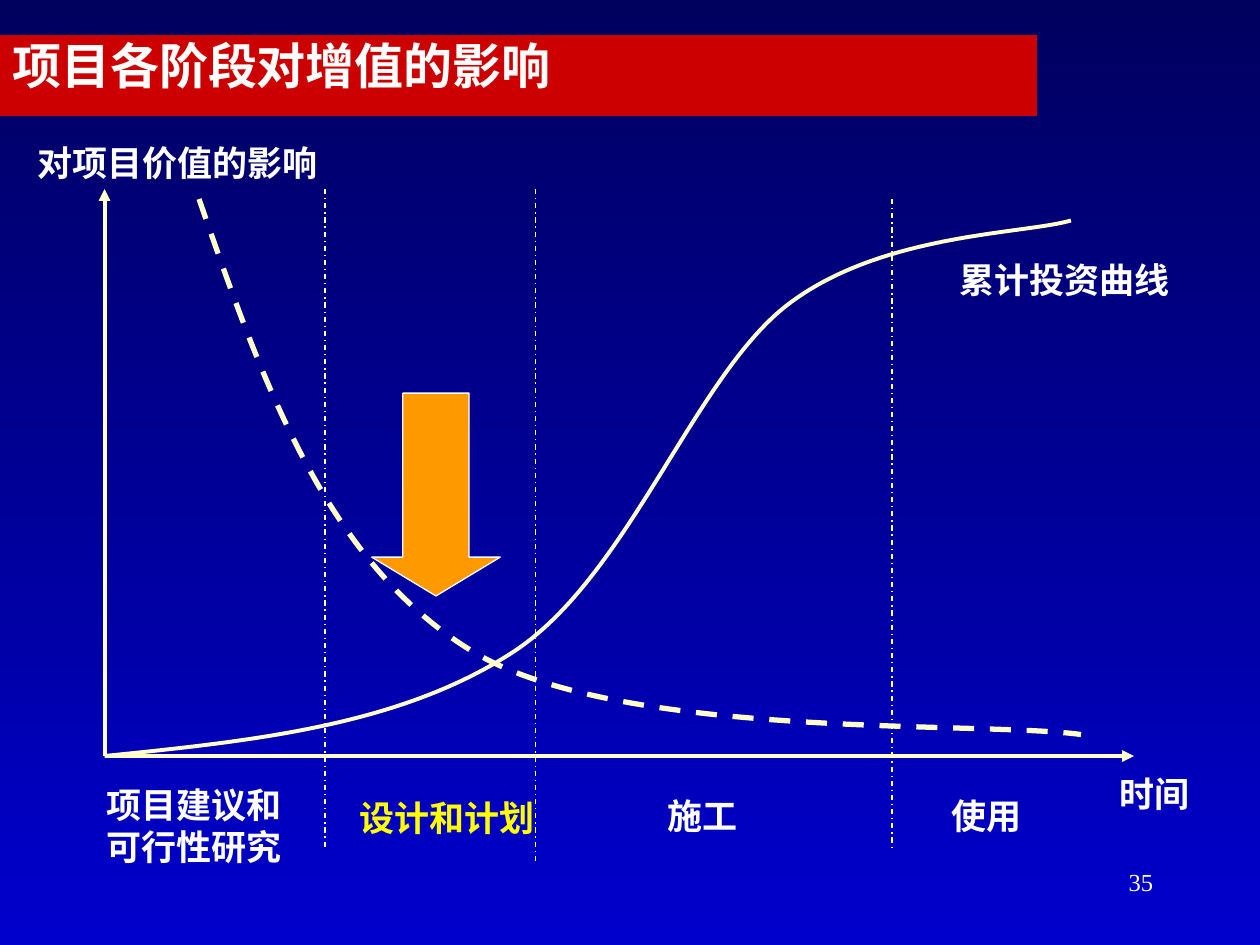
from dataclasses import dataclass

from lxml import etree
from pptx import Presentation
from pptx.dml.color import RGBColor
from pptx.enum.dml import MSO_LINE_DASH_STYLE as Dash
from pptx.enum.shapes import MSO_CONNECTOR as Connector, MSO_SHAPE as Shape
from pptx.enum.text import MSO_ANCHOR as Anchor, PP_ALIGN as Align
from pptx.oxml.ns import qn
from pptx.util import Inches, Pt


@dataclass(frozen=True)
class Theme:
    top: str = "00005E"
    bottom: str = "0000CC"
    banner: str = "CC0000"
    curve: str = "FFFFCC"
    text: str = "FFFFFF"
    highlight: str = "FFFF00"
    arrow: str = "FF9900"
    heading_font: str = "Noto Sans CJK SC"
    number_font: str = "Times New Roman"
    title_size: int = 28
    label_size: int = 20
    number_size: int = 14


@dataclass(frozen=True)
class Box:
    left: float
    top: float
    width: float
    height: float

    def inner(self, x, y, width, height):
        return Box(self.left + x, self.top + y, width, height)

    def point(self, x, y):
        return Inches(self.left + x), Inches(self.top + y)

    def lengths(self):
        return [Inches(v) for v in (self.left, self.top, self.width, self.height)]


THEME = Theme()


def set_all(target, values):
    for name, value in values.items():
        setattr(target, name, value)


def style_line(line, color, width, dash=None):
    line.color.rgb = RGBColor.from_string(color)
    set_all(line, {"width": Pt(width), "dash_style": dash})


def write(shape, words, size, align, anchor=Anchor.MIDDLE, color=THEME.text,
          font=THEME.heading_font, bold=True, inset=0.05, spacing=None):
    frame = shape.text_frame
    set_all(frame, {"word_wrap": True, "vertical_anchor": anchor,
                    "margin_top": Inches(inset), "margin_bottom": Inches(inset)})
    paragraph = frame.paragraphs[0]
    set_all(paragraph, {"alignment": align, "line_spacing": spacing})
    run = paragraph.add_run()
    run.text = words
    set_all(run.font, {"size": Pt(size), "bold": bold, "name": font})
    run.font.color.rgb = RGBColor.from_string(color)
    etree.SubElement(run.font._element, qn("a:ea"), typeface=font)


def add_label(slide, box, words, **text_format):
    settings = {"size": THEME.label_size, "align": Align.CENTER} | text_format
    write(slide.shapes.add_textbox(*box.lengths()), words, **settings)


def add_filled(slide, kind, box, color):
    shape = slide.shapes.add_shape(kind, *box.lengths())
    shape.shadow.inherit = False
    shape.fill.solid()
    shape.fill.fore_color.rgb = RGBColor.from_string(color)
    return shape


def add_rule(slide, start, end, width, dash=None, arrowhead=False):
    rule = slide.shapes.add_connector(Connector.STRAIGHT, *start, *end)
    style_line(rule.line, THEME.curve, width, dash)
    if arrowhead:
        etree.SubElement(rule.line._get_or_add_ln(), qn("a:tailEnd"), type="triangle")
    etree.SubElement(rule._element.spPr, qn("a:effectLst"))


def add_curve(slide, points, width, dash=None):
    """Draw a Bézier curve: a start, then two controls and an end per piece."""
    builder = slide.shapes.build_freeform(*points[0])
    builder.add_line_segments(points[1:], close=False)
    curve = builder.convert_to_shape()
    curve.shadow.inherit = False
    curve.fill.background()
    style_line(curve.line, THEME.curve, width, dash)
    outline = curve._element.find(".//" + qn("a:path"))
    segments = outline.findall(qn("a:lnTo"))
    for first in range(0, len(segments), 3):
        piece = etree.SubElement(outline, qn("a:cubicBezTo"))
        for segment in segments[first:first + 3]:
            piece.append(segment[0])
            outline.remove(segment)


def add_background(slide):
    fill = slide.background.fill
    fill.gradient()
    fill.gradient_angle = 270
    for stop, color, position in zip(fill.gradient_stops, (THEME.top, THEME.bottom), (0, 1)):
        stop.color.rgb = RGBColor.from_string(color)
        stop.position = position


def add_title(slide, box):
    banner = add_filled(slide, Shape.RECTANGLE, box, THEME.banner)
    banner.line.fill.background()
    write(banner, "项目各阶段对增值的影响", THEME.title_size, Align.LEFT, Anchor.TOP, inset=0)


def add_plot(slide, box):
    """Draw the axes, stage dividers, both curves and their labels."""
    origin = box.point(0, box.height)
    for end in (box.point(box.width, box.height), box.point(0, 0)):
        add_rule(slide, origin, end, 2.25, arrowhead=True)
    for x, top, bottom in ((1.75, 0, 5.25), (3.42, 0, 5.33), (6.25, 0.08, 5.25)):
        add_rule(slide, box.point(x, top), box.point(x, bottom), 0.75, Dash.DASH_DOT)

    influence = ((0.75, 0.08), (1.25, 1.52), (1.75, 2.96), (2.92, 3.67),
                 (4.09, 4.38), (6.95, 4.22), (7.75, 4.33))
    investment = ((0, 4.5), (1.18, 4.38), (2.35, 4.26), (3.25, 3.67), (4.16, 3.07),
                  (4.68, 1.49), (5.42, 0.92), (6.16, 0.35), (7.29, 0.36), (7.67, 0.25))
    for points, width, dash in ((influence, 3, Dash.DASH), (investment, 2.25, None)):
        add_curve(slide, [box.point(*point) for point in points], width, dash)

    add_label(slide, box.inner(-0.83, -0.43, 2.82, 0.44), "对项目价值的影响")
    add_label(slide, box.inner(6.59, 0.5, 2.06, 0.44), "累计投资曲线")
    add_label(slide, box.inner(7.67, 4.58, 1.33, 0.44), "时间")

    arrow = add_filled(slide, Shape.DOWN_ARROW, box.inner(2.12, 1.62, 1.02, 1.61), THEME.arrow)
    style_line(arrow.line, THEME.text, 0.75)
    for index, value in enumerate((0.515, 0.302)):
        arrow.adjustments[index] = value


def add_stages(slide, box):
    add_label(slide, box.inner(0, 0, 1.76, 0.77), "项目建议和可行性研究", spacing=Pt(24))
    add_label(slide, box.inner(2.06, 0.1, 1.65, 0.44), "设计和计划", color=THEME.highlight)
    for x, stage in ((4.17, "施工"), (6.42, "使用")):
        add_label(slide, box.inner(x, 0.08, 1.5, 0.44), stage)


def add_page_number(slide, box):
    add_label(slide, box, "35", size=THEME.number_size, align=Align.RIGHT,
              anchor=Anchor.TOP, font=THEME.number_font, bold=False)


def main():
    deck = Presentation()
    set_all(deck, {"slide_width": Inches(10), "slide_height": Inches(7.5)})
    slide = deck.slides.add_slide(deck.slide_layouts[6])
    add_background(slide)
    add_page_number(slide, Box(7.17, 6.83, 2.08, 0.5))
    add_title(slide, Box(0, 0.28, 8.23, 0.64))
    add_plot(slide, Box(0.83, 1.5, 8.17, 4.5))
    add_stages(slide, Box(0.66, 6.17, 1.76, 0.77))
    deck.save("out.pptx")


if __name__ == "__main__":
    main()
